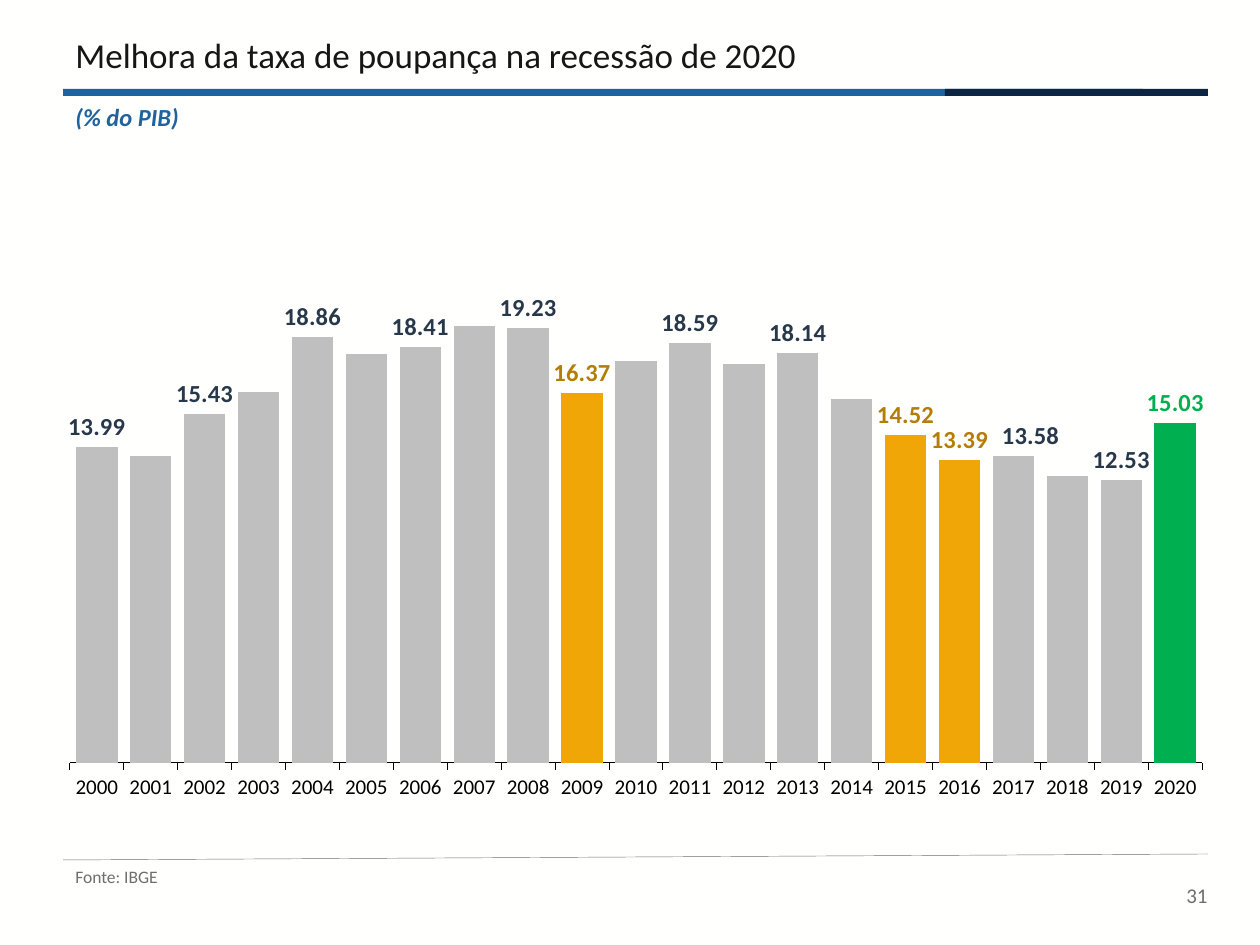
from lxml.etree import SubElement
from pptx import Presentation
from pptx.chart.data import CategoryChartData
from pptx.dml.color import RGBColor
from pptx.enum.chart import XL_CHART_TYPE as ChartType, XL_LABEL_POSITION as LabelPosition
from pptx.enum.chart import XL_TICK_LABEL_POSITION as TickLabels, XL_TICK_MARK as TickMark
from pptx.enum.shapes import MSO_CONNECTOR as Connector, MSO_SHAPE as Shape
from pptx.enum.text import MSO_ANCHOR as Anchor, PP_ALIGN as Align
from pptx.oxml import parse_xml
from pptx.oxml.ns import nsdecls, qn
from pptx.util import Emu, Pt

FONT = "Calibri"
COLORS = {
    "background": "FFFFFE", "title": "161616", "blue": "1F639E", "navy": "0B2543",
    "muted": "6D706D", "label": "27384B", "axis": "000000", "bar": "BFBFBF",
    "recession": "F1A608", "recession_label": "B47D06", "latest": "00B050",
}
FIRST_YEAR = 2000
SAVINGS = [13.99, 13.59, 15.43, 16.41, 18.86, 18.11, 18.41, 19.34, 19.23, 16.37, 17.79,
           18.59, 17.66, 18.14, 16.12, 14.52, 13.39, 13.58, 12.69, 12.53, 15.03]
PLAIN_LABEL_YEARS = [2000, 2002, 2004, 2006, 2008, 2011, 2013, 2017, 2019]
HIGHLIGHTS = {
    2009: ("recession", "recession_label"),
    2015: ("recession", "recession_label"),
    2016: ("recession", "recession_label"),
    2020: ("latest", "latest"),
}
SHIFTED_LABEL_YEAR = 2017


def px(length):
    """Turn pixels into EMU."""
    return Emu(round(length * 914400 / 126))


def rgb(name):
    """Look up a named colour."""
    return RGBColor.from_string(COLORS[name])


def set_font(font, size, color, bold=False, italic=False):
    """Apply the deck's typeface with the given style."""
    font.name, font.size, font.bold, font.italic = FONT, Pt(size), bold, italic
    font.color.rgb = rgb(color)


def add_text(slide, box, text, size, color, anchor=Anchor.TOP, align=Align.LEFT,
             spacing=1.0, before=0, **style):
    """Add a one-paragraph text box."""
    frame = slide.shapes.add_textbox(*map(px, box)).text_frame
    frame.word_wrap, frame.vertical_anchor = True, anchor
    paragraph = frame.paragraphs[0]
    paragraph.text, paragraph.alignment = text, align
    paragraph.line_spacing, paragraph.space_before = spacing, Pt(before)
    set_font(paragraph.font, size, color, **style)


def add_bar(slide, box, color):
    """Add a plain coloured rectangle."""
    shape = slide.shapes.add_shape(Shape.RECTANGLE, *map(px, box))
    shape.shadow.inherit = False
    shape.fill.solid()
    shape.fill.fore_color.rgb = rgb(color)
    shape.line.fill.background()


def add_header(slide, left, top, width):
    """Add the title, the two-tone rule and the unit line."""
    add_text(slide, (left, top, 827, 58), "Melhora da taxa de poupança na recessão de 2020",
             20, "title", anchor=Anchor.BOTTOM, spacing=0.8)
    add_bar(slide, (left, top + 66, 1080, 7), "blue")
    add_bar(slide, (left + 882, top + 66, width - 882, 7), "navy")
    add_text(slide, (left, top + 79, 940, 39), "(% do PIB)", 14, "blue",
             spacing=0.8, before=2.8, bold=True, italic=True)


def add_footer(slide, left, top, width):
    """Add the thin rule, the source and the page number."""
    rule = slide.shapes.add_connector(
        Connector.STRAIGHT, px(left), px(top + 6), px(left + width), px(top))
    rule.line.color.rgb = rgb("muted")
    rule.line.width = Pt(0.25)
    SubElement(rule._element.spPr, qn("a:effectLst"))
    add_text(slide, (left, top + 6, 237, 45), "Fonte: IBGE", 10, "muted")
    add_text(slide, (left + width - 65, top + 27, 77, 50), "31", 12, "muted",
             align=Align.RIGHT, spacing=0.8)


def manual_layout(inner=False, **fractions):
    """Build a chart layout element from fractions of the chart area."""
    target = '<c:layoutTarget val="inner"/>' if inner else ""
    modes = '<c:xMode val="edge"/><c:yMode val="edge"/>' if inner else ""
    parts = "".join(f'<c:{key} val="{value}"/>' for key, value in fractions.items())
    return parse_xml(f'<c:layout {nsdecls("c")}><c:manualLayout>{target}{modes}{parts}'
                     "</c:manualLayout></c:layout>")


def style_axes(chart):
    """Show the year axis and hide the value axis."""
    years, values = chart.category_axis, chart.value_axis
    years.major_tick_mark, years.minor_tick_mark = TickMark.OUTSIDE, TickMark.NONE
    years.tick_label_position = TickLabels.LOW
    years.has_major_gridlines = values.has_major_gridlines = False
    years.format.line.color.rgb = rgb("axis")
    years.format.line.width = Pt(0.5)
    set_font(years.tick_labels.font, 12, "axis")
    values.minimum_scale, values.maximum_scale = 0, 25
    values.visible = False


def add_label(point, color):
    """Put a bold value above a column."""
    label = point.data_label
    set_font(label.font, 14, color, bold=True)
    label.position = LabelPosition.OUTSIDE_END


def add_savings_chart(slide, left, top, width, height):
    """Add the column chart of the savings rate."""
    data = CategoryChartData(number_format="0.00")
    data.categories = [str(FIRST_YEAR + index) for index in range(len(SAVINGS))]
    data.add_series("Taxa de poupança", SAVINGS)
    chart = slide.shapes.add_chart(
        ChartType.COLUMN_CLUSTERED, *map(px, (left, top, width, height)), data).chart
    chart.has_legend = chart.has_title = False
    set_font(chart.font, 10, "label")
    style_axes(chart)

    plot_area = chart._chartSpace.chart.plotArea
    for layout in plot_area.findall(qn("c:layout")):
        plot_area.remove(layout)
    plot_area.insert(0, manual_layout(inner=True, x=0.006, y=0.027, w=0.989, h=0.901))

    plot = chart.plots[0]
    plot.gap_width, plot.vary_by_categories = 30, False
    series = plot.series[0]
    series.format.fill.solid()
    series.format.fill.fore_color.rgb = rgb("bar")
    series.data_labels.show_value = False
    for year in PLAIN_LABEL_YEARS:
        add_label(series.points[year - FIRST_YEAR], "label")
    for year, (fill, label) in HIGHLIGHTS.items():
        point = series.points[year - FIRST_YEAR]
        point.format.fill.solid()
        point.format.fill.fore_color.rgb = rgb(fill)
        add_label(point, label)

    index = SHIFTED_LABEL_YEAR - FIRST_YEAR
    shifted = series._element.xpath(f"c:dLbls/c:dLbl[c:idx/@val='{index}']")[0]
    shifted.insert(1, manual_layout(x=0.015, y=0))


def main():
    """Build the slide and save it."""
    presentation = Presentation()
    presentation.slide_width, presentation.slide_height = px(1260), px(945)
    slide = presentation.slides.add_slide(presentation.slide_layouts[6])
    slide.background.fill.solid()
    slide.background.fill.fore_color.rgb = rgb("background")
    left, width = 63, 1145
    add_header(slide, left, 23, width)
    add_savings_chart(slide, left, 181, width, 627)
    add_footer(slide, left, 854, width)
    presentation.save("out.pptx")


if __name__ == "__main__":
    main()
